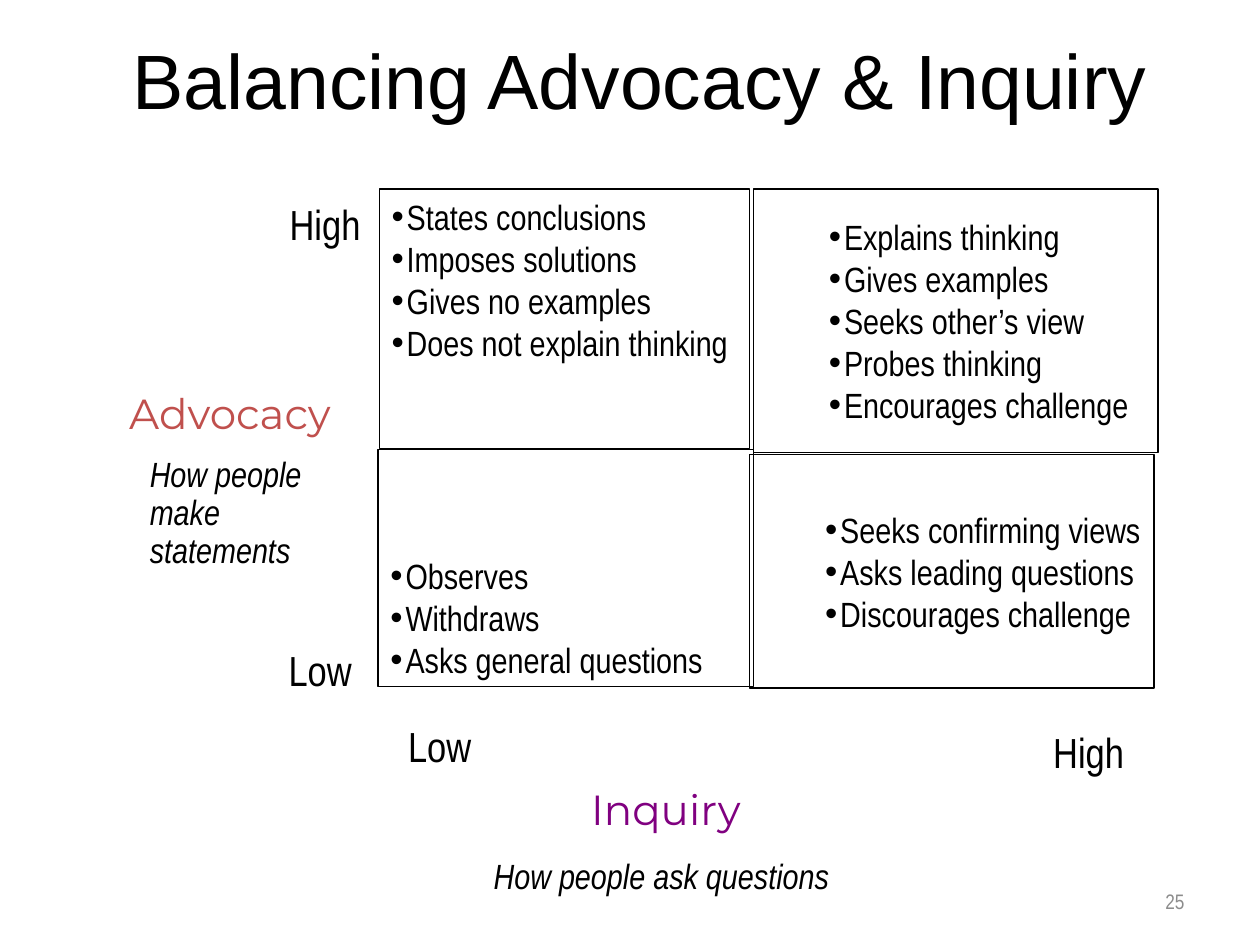
from dataclasses import dataclass

from lxml.etree import SubElement
from pptx import Presentation
from pptx.dml.color import RGBColor
from pptx.enum.shapes import MSO_SHAPE as Preset
from pptx.enum.text import MSO_ANCHOR as Anchor, PP_ALIGN as Align
from pptx.enum.text import MSO_AUTO_SIZE as AutoSize
from pptx.oxml.ns import qn
from pptx.util import Inches, Pt

# The grid has 100 columns and 75 rows
COLUMNS, ROWS = 100, 75


@dataclass(frozen=True)
class Theme:
    ink: str = "000000"
    gray: str = "8C8C8C"
    advocacy: str = "C0504D"
    inquiry: str = "800080"
    heading_font: str = "Arial"
    body_font: str = "Arial Narrow"
    axis_font: str = "Montserrat"
    title_size: int = 44
    axis_size: int = 24
    body_size: int = 20
    number_size: int = 12
    line_width: float = 0.75
    bullet_indent: float = 0.12
    level_indent: float = 0.5


class SlideBuilder:
    def __init__(self, presentation, theme):
        self.theme = theme
        self.column = presentation.slide_width / COLUMNS
        self.row = presentation.slide_height / ROWS
        self.slide = presentation.slides.add_slide(presentation.slide_layouts[5])

    def place(self, left, top, width, height):
        return (round(left * self.column), round(top * self.row),
                round(width * self.column), round(height * self.row))

    def add_text(self, paragraph, text, color=None, **formats):
        run = paragraph.add_run()
        run.text = text
        style = {"name": self.theme.body_font,
                 "size": Pt(self.theme.body_size), **formats}
        for name, value in style.items():
            setattr(run.font, name, value)
        run.font.color.rgb = RGBColor.from_string(color or self.theme.ink)

    def title(self, text, box):
        shape = self.slide.shapes.title
        places = zip(("left", "top", "width", "height"), self.place(*box))
        for name, value in places:
            setattr(shape, name, value)
        frame = shape.text_frame
        frame.vertical_anchor = Anchor.MIDDLE
        paragraph = frame.paragraphs[0]
        paragraph.alignment = Align.CENTER
        self.add_text(paragraph, text, name=self.theme.heading_font,
                      size=Pt(self.theme.title_size))

    def label(self, text, box, align=Align.LEFT, wrap=True, anchor=Anchor.TOP,
              spacing=None, **formats):
        frame = self.slide.shapes.add_textbox(*self.place(*box)).text_frame
        settings = {"word_wrap": wrap, "vertical_anchor": anchor,
                    "auto_size": AutoSize.NONE}
        for name, value in settings.items():
            setattr(frame, name, value)
        paragraph = frame.paragraphs[0]
        paragraph.alignment = align
        paragraph.line_spacing = spacing
        self.add_text(paragraph, text, **formats)

    def quadrant(self, items, box, anchor, level=0):
        shape = self.slide.shapes.add_shape(Preset.RECTANGLE, *self.place(*box))
        shape.shadow.inherit = False
        shape.fill.background()
        shape.line.color.rgb = RGBColor.from_string(self.theme.ink)
        shape.line.width = Pt(self.theme.line_width)
        frame = shape.text_frame
        frame.word_wrap = False
        frame.vertical_anchor = anchor
        for index, item in enumerate(items):
            paragraph = frame.add_paragraph() if index else frame.paragraphs[0]
            paragraph.alignment = Align.LEFT
            paragraph.level = level
            self.bullet(paragraph, level)
            self.add_text(paragraph, item)

    def bullet(self, paragraph, level):
        indent = self.theme.bullet_indent
        margin = indent + level * self.theme.level_indent
        properties = paragraph._p.get_or_add_pPr()
        properties.set("marL", str(Inches(margin)))
        properties.set("indent", str(-Inches(indent)))
        SubElement(properties, qn("a:buFont"), typeface="Arial")
        SubElement(properties, qn("a:buChar"), char="•")


def main():
    presentation = Presentation()
    presentation.slide_width, presentation.slide_height = Inches(10), Inches(7.5)
    theme = Theme()
    builder = SlideBuilder(presentation, theme)

    # Slide number and title
    builder.label("25", (71.7, 69.5, 23.3, 4), Align.RIGHT, anchor=Anchor.MIDDLE,
                  color=theme.gray, size=Pt(theme.number_size))
    builder.title("Balancing Advocacy & Inquiry", (8.3, 0, 85, 12.5))

    # Four quadrants
    builder.quadrant(
        ["States conclusions", "Imposes solutions", "Gives no examples",
         "Does not explain thinking"],
        (30.1, 15, 29.4, 20.6), Anchor.TOP)
    builder.quadrant(
        ["Observes", "Withdraws", "Asks general questions"],
        (30, 35.7, 29.8, 18.8), Anchor.BOTTOM)
    builder.quadrant(
        ["Explains thinking", "Gives examples", "Seeks other’s view",
         "Probes thinking", "Encourages challenge"],
        (59.8, 15, 32.1, 20.9), Anchor.MIDDLE, level=1)
    builder.quadrant(
        ["Seeks confirming views", "Asks leading questions",
         "Discourages challenge"],
        (59.5, 36.1, 32.1, 18.5), Anchor.MIDDLE, level=1)

    # Ends of the two axes
    for text, left, top, align in (("Low", 31.4, 56.7, Align.LEFT),
                                   ("Low", 18.9, 50.7, Align.RIGHT),
                                   ("High", 19.6, 15.3, Align.RIGHT),
                                   ("High", 80.2, 57.2, Align.RIGHT)):
        builder.label(text, (left, top, 10, 5), align, size=Pt(theme.axis_size))

    # Axis names
    for text, left, top, color in (("Advocacy", 9.4, 30.3, theme.advocacy),
                                   ("Inquiry", 44, 61.7, theme.inquiry)):
        builder.label(text, (left, top, 17.7, 4.7), Align.CENTER, wrap=False,
                      color=color, name=theme.axis_font, size=Pt(theme.axis_size))

    # Axis explanations
    for text, box, align in (
            ("How people make statements", (10.9, 35.8, 14.2, 10), Align.LEFT),
            ("How people ask questions", (35, 67.7, 35, 4), Align.CENTER)):
        builder.label(text, box, align, spacing=0.9, italic=True)

    presentation.save("out.pptx")


if __name__ == "__main__":
    main()
